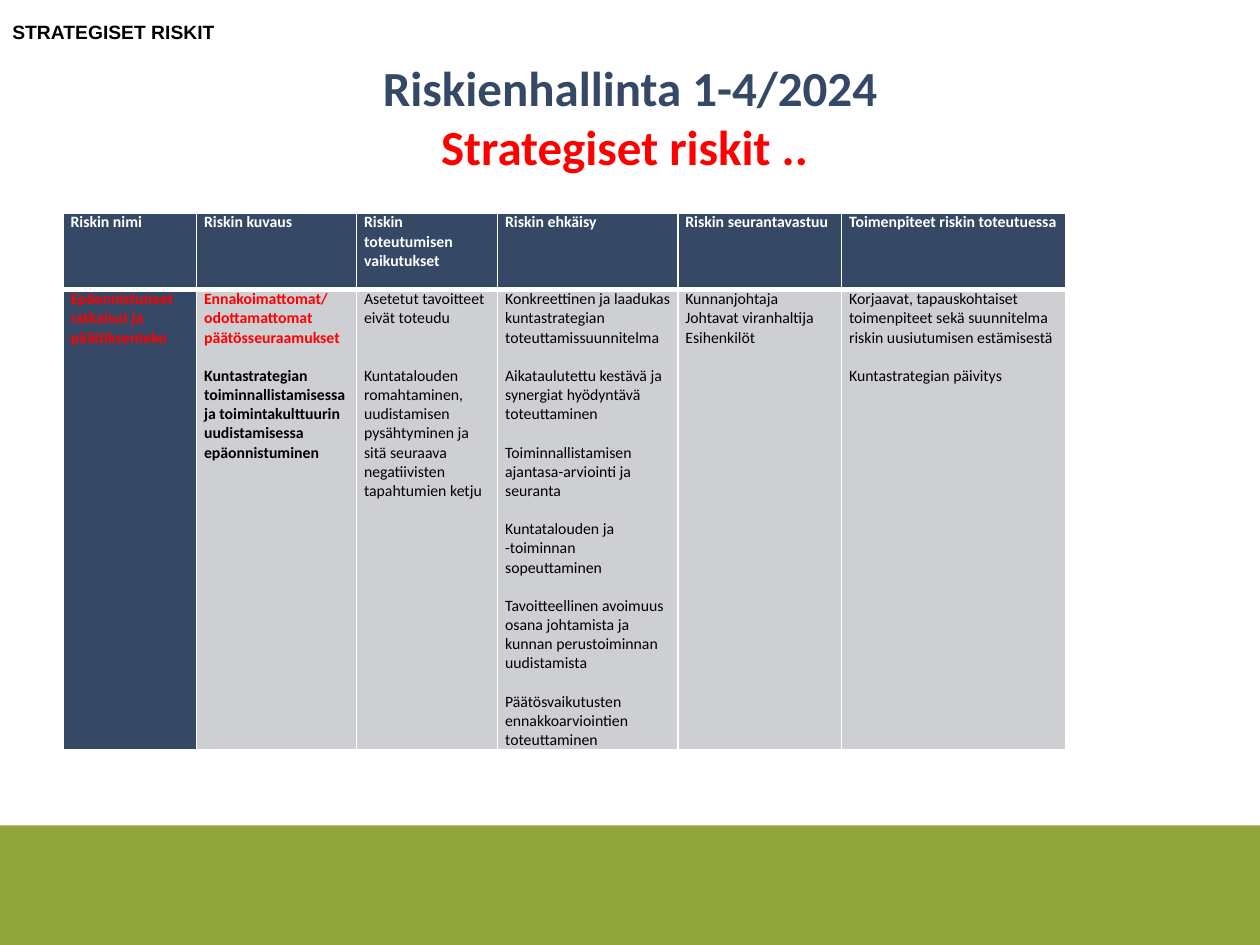
from copy import deepcopy

from lxml import etree
from pptx import Presentation
from pptx.dml.color import RGBColor
from pptx.enum.shapes import MSO_SHAPE
from pptx.enum.text import MSO_ANCHOR, PP_ALIGN
from pptx.oxml.ns import qn
from pptx.util import Inches, Pt

RECTANGLE = MSO_SHAPE.RECTANGLE
MIDDLE = MSO_ANCHOR.MIDDLE
TOP = MSO_ANCHOR.TOP
CENTER = PP_ALIGN.CENTER
LEFT = PP_ALIGN.LEFT

COLORS = {
    "navy": "354866",
    "red": "FF0000",
    "green": "90A63A",
    "gray": "CECFD3",
    "white": "FFFFFF",
    "black": "000000",
}
LINE_HEIGHT = 11


def add_run(paragraph, text, size, color, bold=True, font="Calibri"):
    run = paragraph.add_run()
    run.text = text
    run.font.name = font
    run.font.size = Pt(size)
    run.font.bold = bold
    run.font.color.rgb = RGBColor.from_string(COLORS[color])
    return run


def set_borders(cell, widths):
    properties = cell._tc.get_or_add_tcPr()
    for position, (side, width) in enumerate(widths.items()):
        line = etree.Element(qn(f"a:{side}"), w=str(Pt(width)))
        fill = etree.SubElement(line, qn("a:solidFill"))
        etree.SubElement(fill, qn("a:srgbClr"), val=COLORS["white"])
        properties.insert(position, line)


presentation = Presentation()
presentation.slide_width = Inches(10)
presentation.slide_height = Inches(7.5)
slide = presentation.slides.add_slide(presentation.slide_layouts[5])

footer_band = slide.shapes.add_shape(
    RECTANGLE, Inches(0), Inches(6.55), Inches(10), Inches(0.95))
footer_band.shadow.inherit = False
footer_band.fill.solid()
footer_band.fill.fore_color.rgb = RGBColor.from_string(COLORS["green"])
footer_band.line.fill.background()

title = slide.shapes.title
title.left, title.top = Inches(0.5), Inches(0.3)
title.width, title.height = Inches(9), Inches(1.25)
title.text_frame.vertical_anchor = MIDDLE
paragraph = title.text_frame.paragraphs[0]
paragraph.alignment = CENTER
heading = add_run(paragraph, "Riskienhallinta 1-4/2024", 28, "navy")
paragraph.add_line_break()
paragraph._p.find(qn("a:br")).append(deepcopy(heading._r.rPr))
add_run(paragraph, "Strategiset riskit .. ", 28, "red")

headers = [
    "Riskin nimi", "Riskin kuvaus", "Riskin toteutumisen vaikutukset",
    "Riskin ehkäisy", "Riskin seurantavastuu",
    "Toimenpiteet riskin toteutuessa",
]
# Each entry: text, empty lines above, color, bold
risk = [
    [("Epäonnistuneet ratkaisut ja päätöksenteko", 0, "red", True)],
    [
        ("Ennakoimattomat/", 0, "red", True),
        ("odottamattomat päätösseuraamukset", 0, "red", True),
        ("Kuntastrategian toiminnallistamisessa ja toimintakulttuurin "
         "uudistamisessa epäonnistuminen", 1, "black", True),
    ],
    [
        ("Asetetut tavoitteet eivät toteudu", 0, "black", False),
        ("Kuntatalouden romahtaminen, uudistamisen pysähtyminen ja sitä "
         "seuraava negatiivisten tapahtumien ketju", 2, "black", False),
    ],
    [
        ("Konkreettinen ja laadukas kuntastrategian toteuttamissuunnitelma",
         0, "black", False),
        ("Aikataulutettu kestävä ja synergiat hyödyntävä toteuttaminen",
         1, "black", False),
        ("Toiminnallistamisen ajantasa-arviointi ja seuranta",
         1, "black", False),
        ("Kuntatalouden ja -toiminnan sopeuttaminen", 1, "black", False),
        ("Tavoitteellinen avoimuus osana johtamista ja kunnan "
         "perustoiminnan uudistamista", 1, "black", False),
        ("Päätösvaikutusten ennakkoarviointien toteuttaminen",
         1, "black", False),
    ],
    [
        ("Kunnanjohtaja", 0, "black", False),
        ("Johtavat viranhaltija", 0, "black", False),
        ("Esihenkilöt", 0, "black", False),
    ],
    [
        ("Korjaavat, tapauskohtaiset toimenpiteet sekä suunnitelma riskin "
         "uusiutumisen estämisestä", 0, "black", False),
        ("Kuntastrategian päivitys", 1, "black", False),
    ],
]
rows = [[[(header, 0, "white", True)] for header in headers], risk]
column_widths = [1.06, 1.27, 1.12, 1.43, 1.3, 1.78]
row_heights = [0.61, 3.64]

table = slide.shapes.add_table(
    len(rows), len(headers), Inches(0.5), Inches(1.69),
    Inches(sum(column_widths)), Inches(sum(row_heights))).table
for column, width in zip(table.columns, column_widths):
    column.width = Inches(width)
for row, height in zip(table.rows, row_heights):
    row.height = Inches(height)

for row_index, row in enumerate(rows):
    for column_index, entries in enumerate(row):
        cell = table.cell(row_index, column_index)
        cell.margin_left = cell.margin_right = Inches(0.06)
        cell.margin_top = cell.margin_bottom = Inches(0)
        cell.vertical_anchor = TOP
        dark = row_index == 0 or column_index == 0
        cell.fill.solid()
        cell.fill.fore_color.rgb = RGBColor.from_string(
            COLORS["navy" if dark else "gray"])
        set_borders(cell, {
            "lnL": 1, "lnR": 1,
            "lnT": 3 if row_index == 1 else 1,
            "lnB": 3 if row_index == 0 else 1,
        })
        for index, (text, empty_lines, color, bold) in enumerate(entries):
            frame = cell.text_frame
            paragraph = frame.add_paragraph() if index else frame.paragraphs[0]
            if empty_lines:
                paragraph.space_before = Pt(empty_lines * LINE_HEIGHT)
            add_run(paragraph, text, 9, color, bold)

label = slide.shapes.add_textbox(Inches(0), Inches(0), Inches(10), Inches(0.5))
label.text_frame.word_wrap = True
label.text_frame.vertical_anchor = MIDDLE
paragraph = label.text_frame.paragraphs[0]
paragraph.alignment = LEFT
add_run(paragraph, "STRATEGISET RISKIT", 11, "black", font="Arial")

presentation.save("out.pptx")
